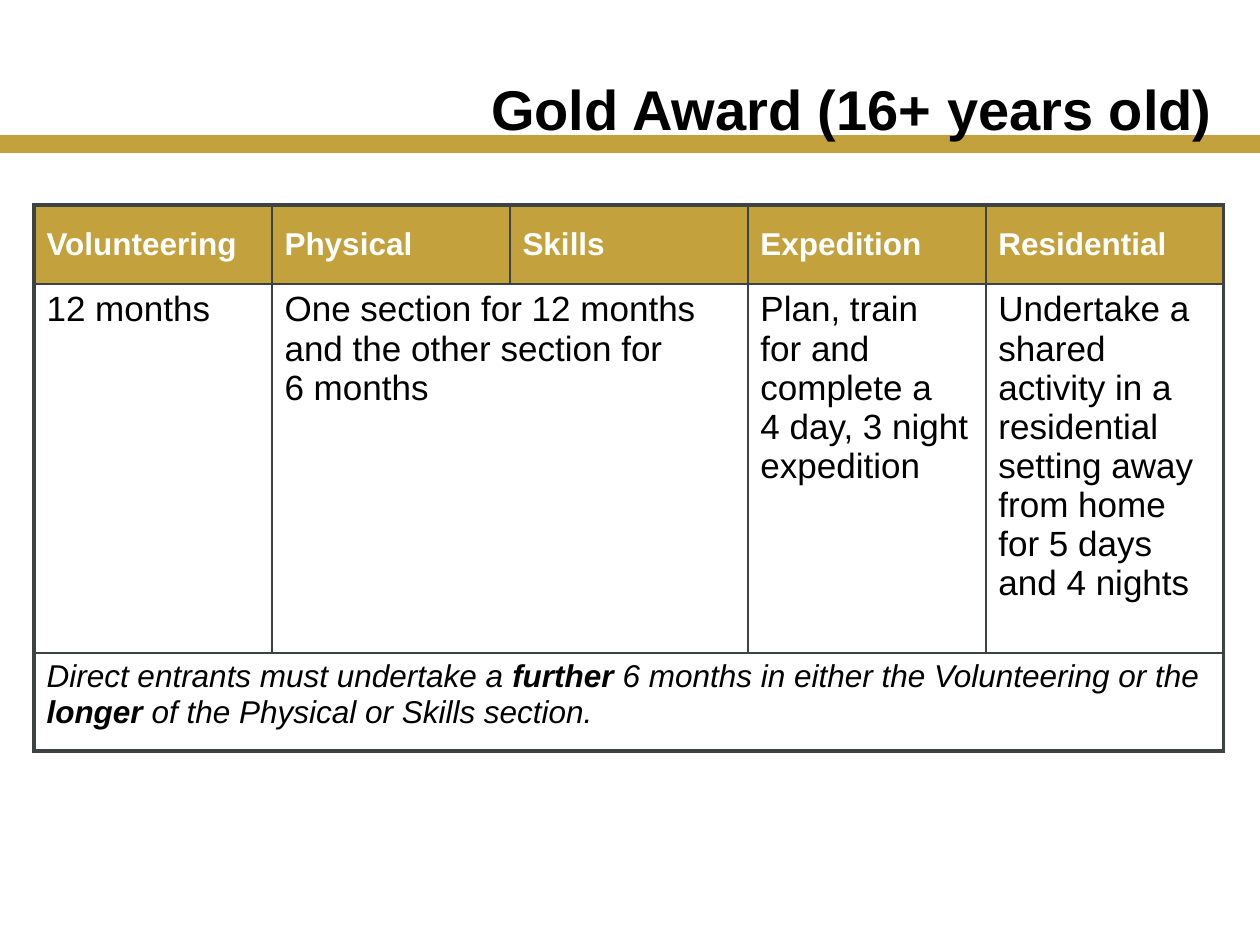
from lxml import etree
from pptx import Presentation
from pptx.dml.color import RGBColor
from pptx.enum.shapes import MSO_CONNECTOR
from pptx.enum.text import MSO_ANCHOR, PP_ALIGN
from pptx.oxml.ns import qn
from pptx.util import Emu, Pt

STRAIGHT = MSO_CONNECTOR.STRAIGHT
TOP, MIDDLE, BOTTOM = MSO_ANCHOR.TOP, MSO_ANCHOR.MIDDLE, MSO_ANCHOR.BOTTOM
RIGHT = PP_ALIGN.RIGHT
GOLD = RGBColor(0xC3, 0xA2, 0x3E)
BORDER = RGBColor(0x3D, 0x42, 0x42)
BLACK = RGBColor(0, 0, 0)
WHITE = RGBColor(0xFF, 0xFF, 0xFF)
FONT = "Arial"
THIN, THICK = 1, 2.25


def px(value):
    return Emu(round(value * 914400 / 126))


def add_border(cell, side, width):
    properties = cell._tc.get_or_add_tcPr()
    line = etree.SubElement(properties, qn(f"a:ln{side}"), w=str(Pt(width)))
    fill = etree.SubElement(line, qn("a:solidFill"))
    etree.SubElement(fill, qn("a:srgbClr"), val=str(BORDER))


deck = Presentation()
deck.slide_width, deck.slide_height = px(1260), px(945)
page = deck.slides.add_slide(deck.slide_layouts[6])

bar = page.shapes.add_connector(STRAIGHT, 0, px(144), px(1260), px(144))
bar.line.color.rgb = GOLD
bar.line.width = Pt(10)
etree.SubElement(bar._element.spPr, qn("a:effectLst"))

title = page.shapes.add_textbox(px(34), 0, px(1191), px(145))
frame = title.text_frame
frame.word_wrap = True
frame.vertical_anchor = BOTTOM
frame.margin_bottom = px(3)
frame.text = "Gold Award (16+ years old)"
para = frame.paragraphs[0]
para.alignment = RIGHT
font = para.runs[0].font
font.name, font.size, font.bold = FONT, Pt(32), True
font.color.rgb = BLACK

ROW_HEIGHTS = [79, 369, 98]
COLUMN_COUNT, COLUMN_WIDTH = 5, 238
SECTIONS = ["Volunteering", "Physical", "Skills", "Expedition", "Residential"]
REQUIREMENTS = {
    0: "12 months",
    1: "One section for 12 months and the other section for\v6 months",
    3: "Plan, train\vfor and complete a\v4 day, 3 night expedition",
    4: "Undertake a shared activity in a residential setting away from home "
       "for 5 days and 4 nights",
}
ENTRANT_NOTE = [
    ("Direct entrants must undertake a ", False),
    ("further ", True),
    ("6 months in either the Volunteering or the ", False),
    ("longer ", True),
    ("of the Physical or Skills section.", False),
]

table = page.shapes.add_table(
    len(ROW_HEIGHTS), COLUMN_COUNT, px(34), px(205),
    px(COLUMN_COUNT * COLUMN_WIDTH), px(sum(ROW_HEIGHTS))).table
for row, height in zip(table.rows, ROW_HEIGHTS):
    row.height = px(height)
for column in table.columns:
    column.width = px(COLUMN_WIDTH)
table.cell(1, 1).merge(table.cell(1, 2))
table.cell(2, 0).merge(table.cell(2, 4))

last_row, last_column = len(ROW_HEIGHTS) - 1, COLUMN_COUNT - 1
for r in range(len(ROW_HEIGHTS)):
    for c in range(COLUMN_COUNT):
        cell = table.cell(r, c)
        end = c + cell.span_width - 1 if cell.is_merge_origin else c
        if not cell.is_spanned:
            add_border(cell, "L", THICK if c == 0 else THIN)
        if not cell.is_spanned or c == last_column:
            add_border(cell, "R", THICK if end == last_column else THIN)
        add_border(cell, "T", THICK if r == 0 else THIN)
        add_border(cell, "B", THICK if r == last_row else THIN)
        if r == 0:
            cell.fill.solid()
            cell.fill.fore_color.rgb = GOLD
        else:
            cell.fill.background()
        cell.vertical_anchor = MIDDLE if r == 0 else TOP

for c, section in enumerate(SECTIONS):
    table.cell(0, c).text_frame.text = section
for c, requirement in REQUIREMENTS.items():
    table.cell(1, c).text_frame.text = requirement
note = table.cell(2, 0).text_frame.paragraphs[0]
for text, bold in ENTRANT_NOTE:
    span = note.add_run()
    span.text = text
    span.font.bold = bold

ROW_STYLES = [(18, WHITE), (20, BLACK), (18, BLACK)]
for r, (size, color) in enumerate(ROW_STYLES):
    for cell in table.rows[r].cells:
        for span in cell.text_frame.paragraphs[0].runs:
            span.font.name, span.font.size = FONT, Pt(size)
            span.font.color.rgb = color
            span.font.italic = r == last_row
            if r != last_row:
                span.font.bold = r == 0

deck.save("out.pptx")
